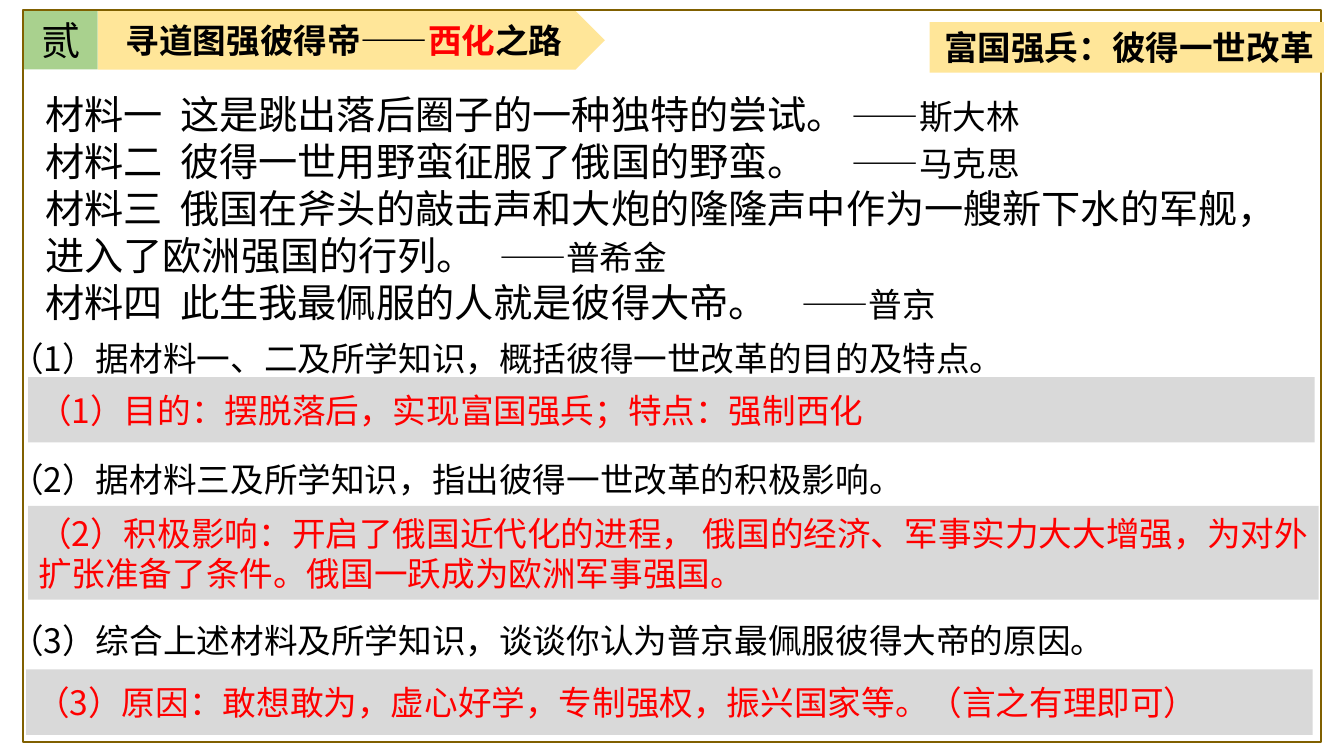
import dataclasses
import typing

import pptx
import pptx.dml.color
import pptx.enum.shapes
import pptx.enum.text
import pptx.oxml.ns
import pptx.util
from pptx.util import Inches

FONT = "Noto Sans CJK SC"
COLORS = {
    "black": "000000",
    "red": "FF0000",
    "yellow": "FFE699",
    "green": "A9D18E",
    "gray": "D9D9D9",
    "frame": "806000",
}
ALIGN = pptx.enum.text.PP_ALIGN
ANCHOR = pptx.enum.text.MSO_ANCHOR
SHAPE = pptx.enum.shapes.MSO_SHAPE


@dataclasses.dataclass(frozen=True)
class Run:
    text: str
    size: int = 24
    color: str = "black"
    bold: bool = False


@dataclasses.dataclass(frozen=True)
class Box:
    left: float
    top: float
    width: float
    height: float


@dataclasses.dataclass(frozen=True)
class Panel:
    box: Box
    fill: str
    runs: tuple[Run, ...]
    alignment: ALIGN = ALIGN.LEFT
    kind: SHAPE = SHAPE.RECTANGLE


@dataclasses.dataclass(frozen=True)
class Material:
    quote: str
    author: str
    author_left: float


@dataclasses.dataclass(frozen=True)
class Question:
    text: str
    answer_lines: int


MATERIALS = (
    Material("材料一  这是跳出落后圈子的一种独特的尝试。", "——斯大林", 9.1),
    Material("材料二  彼得一世用野蛮征服了俄国的野蛮。", "——马克思", 8.88),
    Material("材料三  俄国在斧头的敲击声和大炮的隆隆声中作为一艘新下水的军舰，"
             "进入了欧洲强国的行列。", "——普希金", 7.16),
    Material("材料四  此生我最佩服的人就是彼得大帝。", "——普京", 8.66),
)
QUESTIONS = (
    Question("（1）据材料一、二及所学知识，概括彼得一世改革的目的及特点。", 0),
    Question("（2）据材料三及所学知识，指出彼得一世改革的积极影响。", 2),
    Question("（3）综合上述材料及所学知识，谈谈你认为普京最佩服彼得大帝的原因。", 3),
)
PANELS = (
    Panel(Box(0.24, 0.11, 0.73, 0.58), "green", (Run("贰", 28),), ALIGN.CENTER),
    Panel(Box(0.97, 0.11, 5.03, 0.58), "yellow",
          (Run("寻道图强彼得帝——", bold=True), Run("西化", color="red", bold=True),
           Run("之路", bold=True)), ALIGN.CENTER, SHAPE.PENTAGON),
    Panel(Box(0.28, 3.74, 12.76, 0.65), "gray",
          (Run("（1）目的：摆脱落后，实现富国强兵；特点：强制西化", color="red"),)),
    Panel(Box(0.28, 5.02, 12.8, 0.93), "gray",
          (Run("（2）积极影响：开启了俄国近代化的进程， 俄国的经济、军事实力大大增强，"
               "为对外扩张准备了条件。俄国一跃成为欧洲军事强国。", color="red"),)),
    Panel(Box(0.26, 6.64, 12.76, 0.65), "gray",
          (Run("（3）原因：敢想敢为，虚心好学，专制强权，振兴国家等。（言之有理即可）",
               color="red"),)),
)


def set_attributes(target: typing.Any, values: dict[str, typing.Any]) -> None:
    for name, value in values.items():
        setattr(target, name, value)


def place(shape: typing.Any, box: Box) -> None:
    set_attributes(shape, {name: Inches(value)
                           for name, value in dataclasses.asdict(box).items()})


def paint(shape: typing.Any, color: str) -> None:
    shape.fill.solid()
    shape.fill.fore_color.rgb = pptx.dml.color.RGBColor.from_string(COLORS[color])


def prepare_frame(shape: typing.Any, anchor: ANCHOR) -> typing.Any:
    frame = shape.text_frame
    set_attributes(frame, {
        "word_wrap": True,
        "auto_size": pptx.enum.text.MSO_AUTO_SIZE.NONE,
        "vertical_anchor": anchor,
        "margin_left": Inches(0.1), "margin_right": Inches(0.1),
        "margin_top": Inches(0.05), "margin_bottom": Inches(0.05),
    })
    return frame


def write(paragraph: typing.Any, runs: tuple[Run, ...], alignment: ALIGN = ALIGN.LEFT,
          line_points: float = 28.8, lines_before: int = 0) -> None:
    """Fill a paragraph; lines_before is the gap above it, in line heights."""
    set_attributes(paragraph, {
        "alignment": alignment,
        "line_spacing": pptx.util.Pt(line_points),
        "space_before": pptx.util.Pt(line_points * lines_before),
        "space_after": pptx.util.Pt(0),
    })
    for item in runs:
        run = paragraph.add_run()
        run.text = item.text
        set_attributes(run.font, {"name": FONT, "size": pptx.util.Pt(item.size),
                                  "bold": item.bold})
        run.font.color.rgb = pptx.dml.color.RGBColor.from_string(COLORS[item.color])
        east_asian = run.font._element.makeelement(pptx.oxml.ns.qn("a:ea"), {"typeface": FONT})
        run.font._element.find(pptx.oxml.ns.qn("a:latin")).addnext(east_asian)


def remove_bullet(paragraph: typing.Any, tab: float | None = None) -> None:
    """Drop bullet and indent, and set one left tab stop if given."""
    properties = paragraph._p.get_or_add_pPr()
    properties.set("marL", "0")
    properties.set("indent", "0")
    properties.append(properties.makeelement(pptx.oxml.ns.qn("a:buNone"), {}))
    if tab is not None:
        tabs = properties.makeelement(pptx.oxml.ns.qn("a:tabLst"), {})
        tabs.append(tabs.makeelement(pptx.oxml.ns.qn("a:tab"),
                                     {"pos": str(Inches(tab)), "algn": "l"}))
        properties.append(tabs)


def next_paragraph(frame: typing.Any, index: int) -> typing.Any:
    return frame.paragraphs[0] if index == 0 else frame.add_paragraph()


def add_frame(slide: typing.Any) -> None:
    frame = slide.shapes.add_shape(SHAPE.RECTANGLE, 0, 0, 0, 0)
    place(frame, Box(0.23, 0.1, 12.87, 7.26))
    frame.shadow.inherit = False
    frame.fill.background()
    frame.line.color.rgb = pptx.dml.color.RGBColor.from_string(COLORS["frame"])
    frame.line.width = pptx.util.Pt(1.75)
    slide.shapes._spTree.insert(2, frame._element)


def fill_title(shape: typing.Any) -> None:
    place(shape, Box(9.22, 0.22, 3.91, 0.5))
    paint(shape, "yellow")
    frame = prepare_frame(shape, ANCHOR.MIDDLE)
    write(frame.paragraphs[0], (Run("富国强兵：彼得一世改革", bold=True),), ALIGN.RIGHT)


def fill_materials(shape: typing.Any) -> None:
    place(shape, Box(0.35, 0.85, 12.61, 2.46))
    frame = prepare_frame(shape, ANCHOR.TOP)
    for index, material in enumerate(MATERIALS):
        paragraph = next_paragraph(frame, index)
        write(paragraph, (Run(material.quote + "\t", 28), Run(material.author)),
              line_points=33.6)
        remove_bullet(paragraph, material.author_left)


def fill_questions(shape: typing.Any) -> None:
    place(shape, Box(0, 3.3, 13.02, 3.33))
    frame = prepare_frame(shape, ANCHOR.TOP)
    for index, question in enumerate(QUESTIONS):
        paragraph = next_paragraph(frame, index)
        write(paragraph, (Run(question.text),), lines_before=question.answer_lines)
        remove_bullet(paragraph)


def add_panel(slide: typing.Any, panel: Panel) -> None:
    shape = slide.shapes.add_shape(panel.kind, 0, 0, 0, 0)
    place(shape, panel.box)
    shape.shadow.inherit = False
    shape.line.fill.background()
    paint(shape, panel.fill)
    size = max(run.size for run in panel.runs)
    write(prepare_frame(shape, ANCHOR.MIDDLE).paragraphs[0], panel.runs,
          panel.alignment, size * 1.2)


def main() -> None:
    presentation = pptx.Presentation()
    set_attributes(presentation, {"slide_width": Inches(13.33), "slide_height": Inches(7.5)})
    slide = presentation.slides.add_slide(presentation.slide_layouts.get_by_name("Two Content"))
    title, materials, questions = list(slide.placeholders)[:3]
    add_frame(slide)
    fill_title(title)
    fill_materials(materials)
    fill_questions(questions)
    for panel in PANELS:
        add_panel(slide, panel)
    presentation.save("out.pptx")


if __name__ == "__main__":
    main()
